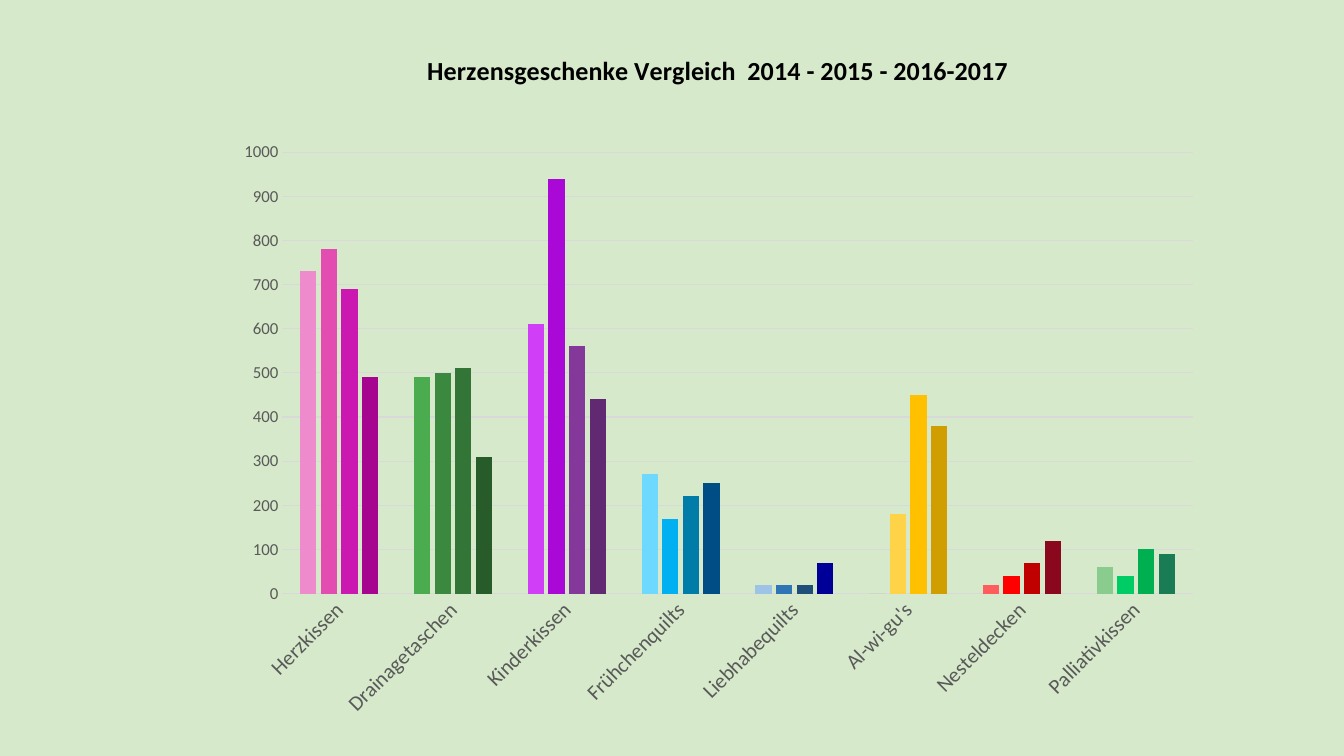
from lxml import etree
from pptx import Presentation
from pptx import util as u
from pptx.chart import data as chart_data
from pptx.dml.color import RGBColor
from pptx.enum import chart as chart_enum
from pptx.oxml.ns import qn

BACKGROUND = RGBColor(0xD6, 0xE9, 0xCA)
BLACK = RGBColor(0x00, 0x00, 0x00)
LABEL_GREY = RGBColor(0x59, 0x59, 0x59)
GRID_GREY = RGBColor(0xD9, 0xD9, 0xD9)
FONT = "Calibri"
CHART_WIDTH = 9.81
CHART_HEIGHT = 6.97

YEARS = ["2014", "2015", "2016", "2017"]
GIFTS = [
    ("Herzkissen", [730, 780, 690, 490], ["ED8BCC", "E34DB1", "CA18B1", "A6068F"]),
    ("Drainagetaschen", [490, 500, 510, 310], ["4AAC4F", "3B893F", "337536", "275B29"]),
    ("Kinderkissen", [610, 940, 560, 440], ["D03EF8", "AA08D6", "83389A", "602971"]),
    ("Frühchenquilts", [270, 170, 220, 250], ["6DD9FF", "00B0F0", "007CA8", "004D86"]),
    ("Liebhabequilts", [20, 20, 20, 70], ["9DC3E6", "2E75B6", "1F4E79", "000099"]),
    ("Al-wi-gu's", [0, 180, 450, 380], ["92D050", "FFD347", "FFC000", "D09E00"]),
    ("Nesteldecken", [20, 40, 70, 120], ["FF5D5D", "FF0000", "C00000", "8B071D"]),
    ("Palliativkissen", [60, 40, 100, 90], ["8ACC8D", "00CC66", "00B050", "1A7C54"]),
]


def format_font(font, size, color, bold=False):
    font.name = FONT
    font.size = u.Pt(size)
    font.bold = bold
    font.color.rgb = color


def place(element, index, **settings):
    for old in element.findall(qn("c:layout")):
        element.remove(old)
    layout = etree.Element(qn("c:layout"))
    manual = etree.SubElement(layout, qn("c:manualLayout"))
    for name, value in settings.items():
        etree.SubElement(manual, qn(f"c:{name}")).set("val", str(value))
    element.insert(index, layout)


deck = Presentation()
deck.slide_width = u.Inches(13.33)
deck.slide_height = u.Inches(7.5)
page = deck.slides.add_slide(deck.slide_layouts[6])
page.background.fill.solid()
page.background.fill.fore_color.rgb = BACKGROUND

gift_data = chart_data.CategoryChartData()
gift_data.categories = [name for name, counts, colors in GIFTS]
for index, year in enumerate(YEARS):
    gift_data.add_series(year, [counts[index] for name, counts, colors in GIFTS])

chart = page.shapes.add_chart(
    chart_enum.XL_CHART_TYPE.COLUMN_CLUSTERED,
    u.Inches(2.22), u.Inches(0.28), u.Inches(CHART_WIDTH), u.Inches(CHART_HEIGHT), gift_data,
).chart
chart.has_legend = False
format_font(chart.font, 10, BLACK)

title = chart.chart_title
para = title.text_frame.paragraphs[0]
span = para.add_run()
span.text = "Herzensgeschenke Vergleich  2014 - 2015 - 2016-2017"
format_font(span.font, 18.6, BLACK, bold=True)
title.include_in_layout = False
place(title._element, 1, xMode="edge", yMode="edge",
      x=1.97 / CHART_WIDTH, y=0.19 / CHART_HEIGHT)

plot = chart.plots[0]
plot.gap_width = 219
plot.overlap = -27
plot.vary_by_categories = False
for index, series in enumerate(plot.series):
    series.invert_if_negative = False
    for position, (name, counts, colors) in enumerate(GIFTS):
        fill = series.points[position].format.fill
        fill.solid()
        fill.fore_color.rgb = RGBColor.from_string(colors[index])

gift_axis = chart.category_axis
gift_axis.major_tick_mark = chart_enum.XL_TICK_MARK.NONE
gift_axis.format.line.color.rgb = GRID_GREY
gift_axis.format.line.width = u.Pt(0.75)
format_font(gift_axis.tick_labels.font, 15, LABEL_GREY)
gift_axis._element.find(qn("c:txPr")).find(qn("a:bodyPr")).set("rot", "-2700000")

count_axis = chart.value_axis
count_axis.minimum_scale = 0
count_axis.maximum_scale = 1000
count_axis.major_unit = 100
count_axis.major_tick_mark = chart_enum.XL_TICK_MARK.NONE
count_axis.format.line.fill.background()
count_axis.major_gridlines.format.line.color.rgb = GRID_GREY
count_axis.major_gridlines.format.line.width = u.Pt(0.75)
format_font(count_axis.tick_labels.font, 12, LABEL_GREY)

plot_area = chart._chartSpace.chart.plotArea
place(plot_area, 0, layoutTarget="inner", xMode="edge", yMode="edge",
      x=0.58 / CHART_WIDTH, y=1.23 / CHART_HEIGHT,
      w=9.03 / CHART_WIDTH, h=4.38 / CHART_HEIGHT)

deck.save("out.pptx")
